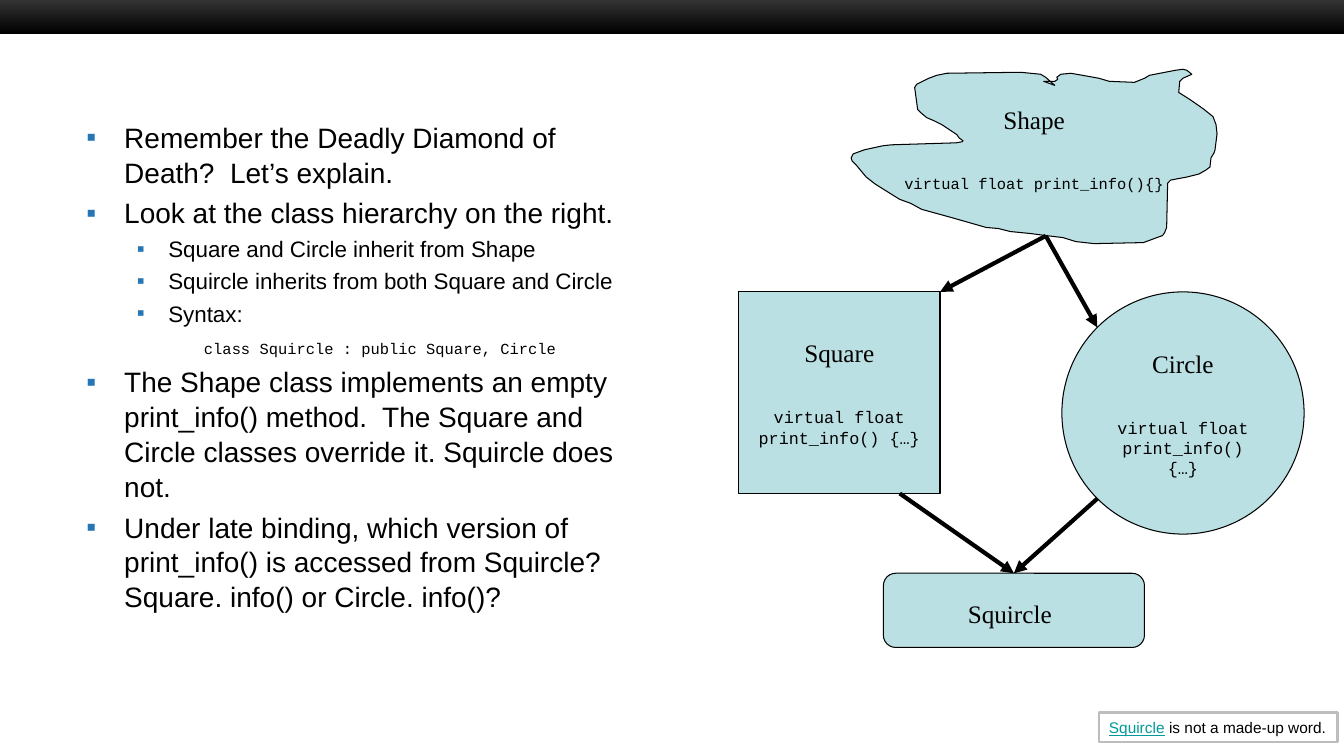
import math

from lxml import etree
from pptx import Presentation
from pptx.dml.color import RGBColor
from pptx.enum.shapes import MSO_CONNECTOR, MSO_SHAPE
from pptx.enum.text import MSO_ANCHOR, MSO_AUTO_SIZE, PP_ALIGN
from pptx.oxml.ns import qn
from pptx.util import Pt

RECTANGLE, OVAL = MSO_SHAPE.RECTANGLE, MSO_SHAPE.OVAL
ROUNDED = MSO_SHAPE.ROUNDED_RECTANGLE
STRAIGHT = MSO_CONNECTOR.STRAIGHT
LEFT, CENTER = PP_ALIGN.LEFT, PP_ALIGN.CENTER
TOP, MIDDLE = MSO_ANCHOR.TOP, MSO_ANCHOR.MIDDLE
NO_AUTOSIZE = MSO_AUTO_SIZE.NONE

BLACK = RGBColor(0x00, 0x00, 0x00)
WHITE = RGBColor(0xFF, 0xFF, 0xFF)
CHARCOAL = RGBColor(0x33, 0x33, 0x33)
PALE_TEAL = RGBColor(0xBB, 0xE0, 0xE3)
LINK_TEAL = RGBColor(0x00, 0x99, 0x99)
BULLET_BLUE = RGBColor(0x26, 0x75, 0xB4)
FRAME_GRAY = RGBColor(0xBD, 0xBD, 0xBD)

SANS, SERIF, MONO = "Arial", "Times New Roman", "Courier New"
SLIDE_WIDTH, SLIDE_HEIGHT = 960, 540

POINTS = [
    ("Remember the Deadly Diamond of Death?  Let’s explain.", "main"),
    ("Look at the class hierarchy on the right.", "main"),
    ("Square and Circle inherit from Shape", "sub"),
    ("Squircle inherits from both Square and Circle", "sub"),
    ("Syntax:", "sub"),
    ("class Squircle : public Square, Circle", "code"),
    ("The Shape class implements an empty print_info() method.  "
     "The Square and Circle classes override it. Squircle does not.", "main"),
    ("Under late binding, which version of print_info() is accessed from "
     "Squircle?  Square. info() or Circle. info()?", "main"),
]
# level, left margin, first-line indent, size, font, line spacing, space before
POINT_STYLES = {
    "main": (0, 27, -27, 20, SANS, 1.04, 4),
    "sub": (1, 58.5, -22.5, 16, SANS, 1.04, 3.2),
    "code": (1, 84, 0, 11, MONO, Pt(19), 3.2),
}

# Outline of the irregular Shape class, on a grid of 0.72 pt
OUTLINE_UNIT = 0.72
SHAPE_OUTLINE = [
    (202, 16), (193, 8), (188, 5), (178, 4), (168, 3), (95, 4), (85, 6),
    (77, 9), (65, 15), (63, 18), (66, 40), (69, 43), (75, 48), (82, 51),
    (90, 55), (105, 65), (107, 68), (111, 71), (110, 72), (104, 73),
    (40, 75), (31, 76), (13, 80), (2, 84), (0, 88), (1, 91), (5, 95),
    (15, 107), (24, 114), (48, 129), (59, 133), (70, 139), (99, 147),
    (134, 157), (146, 158), (158, 161), (178, 163), (193, 165), (210, 167),
    (223, 171), (241, 173), (290, 172), (298, 169), (309, 165), (311, 162),
    (313, 157), (314, 113), (317, 110), (322, 109), (333, 107), (345, 104),
    (352, 100), (356, 97), (357, 88), (360, 83), (361, 80), (363, 64),
    (362, 55), (359, 47), (349, 39), (336, 30), (325, 23), (326, 12),
    (329, 9), (338, 5), (333, 1), (329, 0), (322, 1), (296, 6), (291, 9),
    (281, 13), (256, 12), (246, 9), (235, 7), (218, 4), (208, 5), (204, 8),
    (205, 10), (202, 12), (191, 12),
]


def add_text(paragraph, text, size=11, font=SANS, color=BLACK, underline=False):
    run = paragraph.add_run()
    run.text = text
    run.font.size, run.font.name = Pt(size), font
    run.font.color.rgb = color
    run.font.underline = underline


def style_shape(shape, fill=PALE_TEAL, line=BLACK, width=0.75):
    shape.shadow.inherit = False
    shape.fill.solid()
    shape.fill.fore_color.rgb = fill
    shape.line.color.rgb = line
    shape.line.width = Pt(width)


def add_preset(slide, preset, box, **style):
    shape = slide.shapes.add_shape(preset, *map(Pt, box))
    style_shape(shape, **style)
    return shape


def label_class(shape, name, method=None, method_size=12, anchor=MIDDLE,
                top=3.6, right=7.2):
    frame = shape.text_frame
    frame.word_wrap = True
    frame.vertical_anchor = anchor
    frame.margin_top, frame.margin_right = Pt(top), Pt(right)
    heading = frame.paragraphs[0]
    heading.alignment = CENTER
    add_text(heading, name, size=18, font=SERIF)
    if method:
        code = frame.add_paragraph()
        code.alignment = CENTER
        code.space_before = Pt(28)
        add_text(code, method, size=method_size, font=MONO)


def add_arrow(slide, start, end):
    arrow = slide.shapes.add_connector(STRAIGHT, *map(Pt, start + end))
    arrow.line.color.rgb = BLACK
    arrow.line.width = Pt(3)
    etree.SubElement(arrow.line._get_or_add_ln(), qn("a:tailEnd"), type="triangle")
    etree.SubElement(arrow._element.spPr, qn("a:effectLst"))


def add_header_bar(slide, box):
    bar = add_preset(slide, RECTANGLE, box)
    bar.line.fill.background()
    bar.fill.gradient()
    bar.fill.gradient_angle = 270
    for stop, color in zip(bar.fill.gradient_stops, (CHARCOAL, BLACK)):
        stop.color.rgb = color


def set_bullet(paragraph, margin, indent, bulleted):
    properties = paragraph._p.get_or_add_pPr()
    properties.set("marL", str(Pt(margin)))
    properties.set("indent", str(Pt(indent)))
    if bulleted:
        color = etree.SubElement(properties, qn("a:buClr"))
        etree.SubElement(color, qn("a:srgbClr"), val=str(BULLET_BLUE))
        etree.SubElement(properties, qn("a:buFont"), typeface=SANS)
        etree.SubElement(properties, qn("a:buChar"), char="▪")
    else:
        etree.SubElement(properties, qn("a:buNone"))


def fill_explanation(body, box):
    body.left, body.top, body.width, body.height = map(Pt, box)
    frame = body.text_frame
    frame.word_wrap = True
    frame.auto_size = NO_AUTOSIZE
    frame.vertical_anchor = TOP
    for number, (text, kind) in enumerate(POINTS):
        level, margin, indent, size, font, spacing, before = POINT_STYLES[kind]
        point = frame.add_paragraph() if number else frame.paragraphs[0]
        point.level = level
        set_bullet(point, margin, indent, kind != "code")
        point.alignment = LEFT
        point.line_spacing = spacing
        point.space_before = Pt(before if number else 0)
        add_text(point, text, size=size, font=font)


def add_hierarchy(slide, box):
    left, top, width, height = box
    row_top = top + 159
    side, diameter = 144, 173
    squircle_left, squircle_width, squircle_height = left + 103.5, 186.5, 53
    squircle_top = top + height - squircle_height
    circle_left = left + width - diameter

    # Base class with its free outline
    builder = slide.shapes.build_freeform(
        *SHAPE_OUTLINE[0], scale=float(Pt(OUTLINE_UNIT)))
    builder.add_line_segments(SHAPE_OUTLINE[1:], close=True)
    base = builder.convert_to_shape(Pt(left + 80.5), Pt(top))
    style_shape(base)
    label_class(base, "Shape", "virtual float print_info(){}",
                method_size=11, anchor=TOP, top=25)

    # Derived classes
    method = "virtual float print_info() {…}"
    square = add_preset(slide, RECTANGLE, (left, row_top, side, side))
    label_class(square, "Square", method)
    circle = add_preset(slide, OVAL, (circle_left, row_top, diameter, diameter))
    label_class(circle, "Circle", method)
    squircle = add_preset(
        slide, ROUNDED,
        (squircle_left, squircle_top, squircle_width, squircle_height))
    label_class(squircle, "Squircle", top=7.6, right=13)

    # Inheritance arrows
    base_foot = (left + 219.5, top + 119)
    squircle_head = (squircle_left + squircle_width / 2, squircle_top)
    corner = diameter / 2 * (1 - math.sqrt(0.5))
    circle_x = circle_left + corner
    add_arrow(slide, base_foot, (left + side, row_top))
    add_arrow(slide, base_foot, (circle_x, row_top + corner))
    add_arrow(slide, (left + 0.8 * side, row_top + side), squircle_head)
    add_arrow(slide, (circle_x, row_top + diameter - corner), squircle_head)


def add_footnote(slide, box):
    note = add_preset(slide, RECTANGLE, box, fill=WHITE, line=FRAME_GRAY, width=2)
    frame = note.text_frame
    frame.word_wrap = False
    frame.vertical_anchor = MIDDLE
    sentence = frame.paragraphs[0]
    sentence.alignment = LEFT
    add_text(sentence, "Squircle", color=LINK_TEAL, underline=True)
    add_text(sentence, " is not a made-up word.")


def main():
    deck = Presentation()
    deck.slide_width, deck.slide_height = Pt(SLIDE_WIDTH), Pt(SLIDE_HEIGHT)
    slide = deck.slides.add_slide(deck.slide_layouts[1])
    title = slide.shapes.title._element
    title.getparent().remove(title)

    add_header_bar(slide, (0, 0, SLIDE_WIDTH, 24))
    fill_explanation(slide.placeholders[1], (54.5, 81.5, 408, 306))
    add_hierarchy(slide, (527.5, 49.5, 404, 413))
    add_footnote(slide, (785, 509, 170.5, 21))
    deck.save("out.pptx")


if __name__ == "__main__":
    main()
